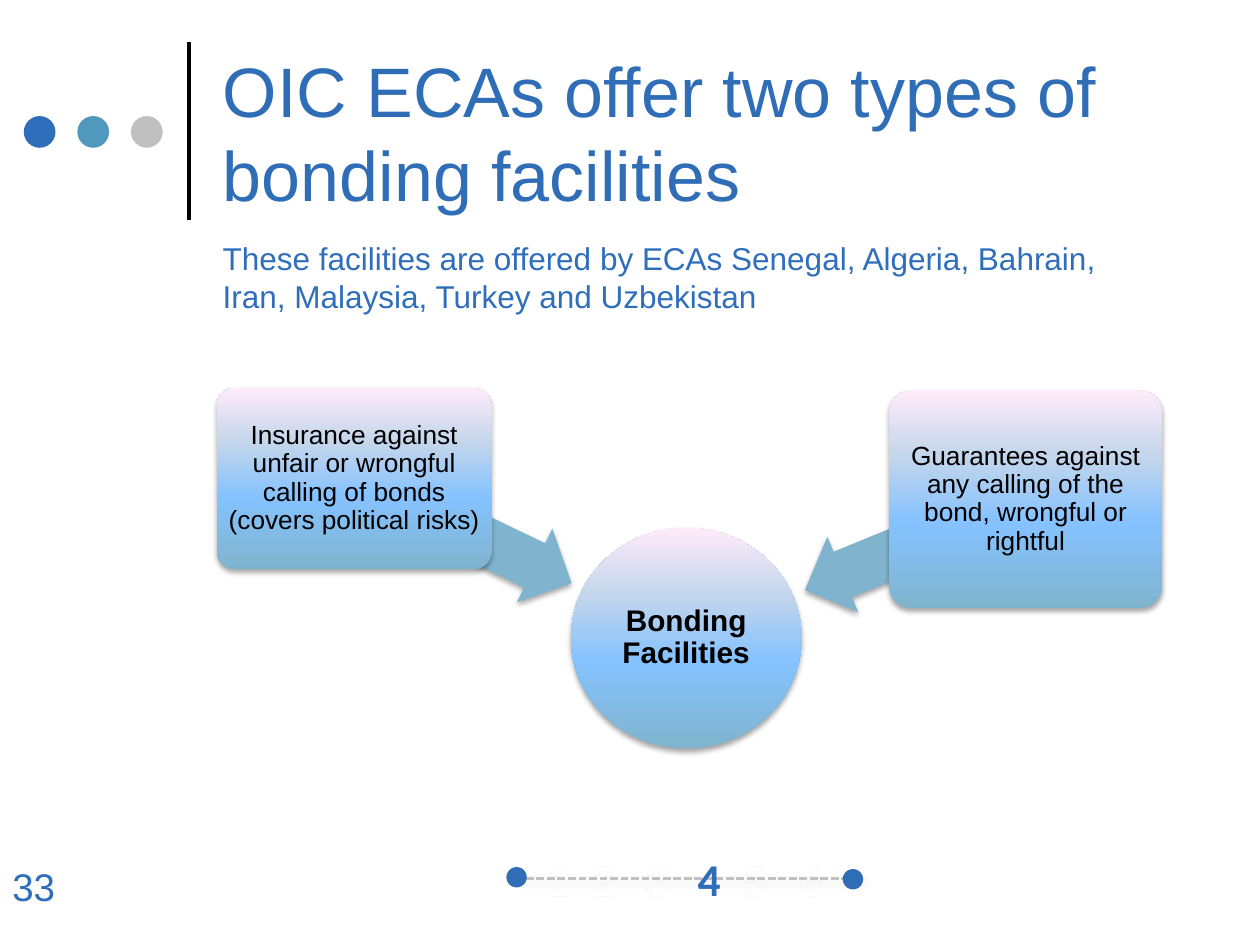
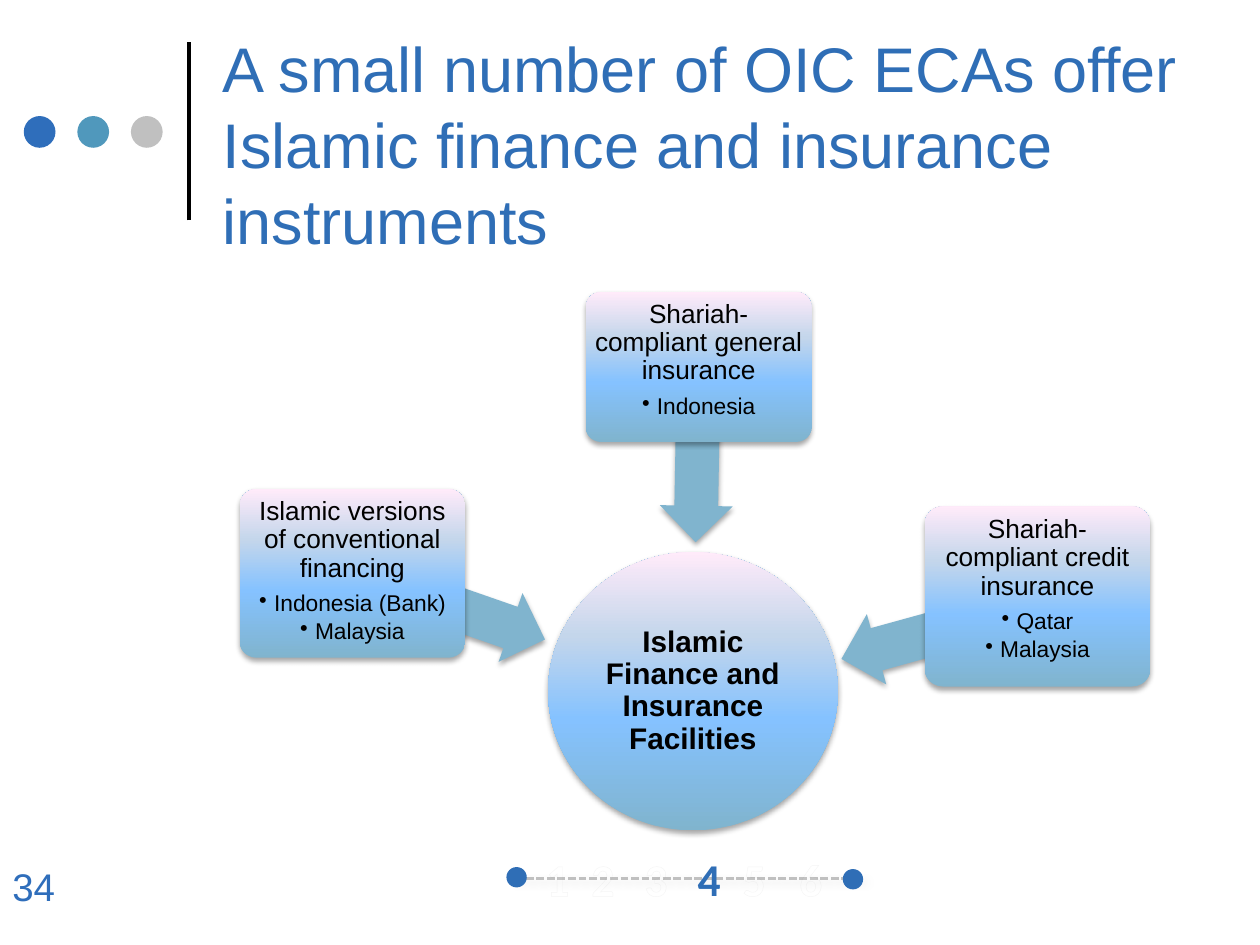
from dataclasses import dataclass

from lxml import etree
from pptx import Presentation
from pptx.dml.color import RGBColor
from pptx.enum.dml import MSO_LINE
from pptx.enum.shapes import MSO_CONNECTOR, MSO_SHAPE
from pptx.enum.text import MSO_ANCHOR, PP_ALIGN
from pptx.oxml.ns import qn
from pptx.util import Cm, Pt

ELLIPSE = MSO_SHAPE.OVAL
CARD = MSO_SHAPE.ROUNDED_RECTANGLE
ARROW = MSO_SHAPE.LEFT_ARROW
STRAIGHT = MSO_CONNECTOR.STRAIGHT
DASHED = MSO_LINE.SQUARE_DOT
TOP, MIDDLE = MSO_ANCHOR.TOP, MSO_ANCHOR.MIDDLE
LEFT, CENTER = PP_ALIGN.LEFT, PP_ALIGN.CENTER
TITLE_ONLY = 5


@dataclass(frozen=True)
class Theme:
    """Colours, fonts and type sizes of the deck."""
    blue: str = "2F6EBB"
    title_blue: str = "2F6EB6"
    teal: str = "5098BC"
    grey: str = "C0C0C0"
    black: str = "000000"
    white: str = "FFFFFF"
    digit_outline: str = "5F5F5F"
    line_shadow: str = "BFBFBF"
    arrow: str = "80B4CE"
    gradient: tuple = ((0, "80B4CE"), (40, "85C2FF"), (70, "C4D6EB"), (100, "FFEBFA"))
    font: str = "Arial"
    digit_font: str = "Calibri"
    digit_size: int = 26
    number_size: int = 22
    subtitle_size: int = 18
    hub_size: int = 17
    card_size: int = 15
    item_size: int = 13


THEME = Theme()


@dataclass(frozen=True)
class Box:
    """A rectangle in centimetres."""
    left: float
    top: float
    width: float
    height: float

    def inside(self, left, top, width, height):
        """Return a box placed relative to this one."""
        return Box(self.left + left, self.top + top, width, height)

    def lengths(self):
        """Return the four lengths for python-pptx."""
        return [Cm(value) for value in (self.left, self.top, self.width, self.height)]


def add_color(parent, color, alpha=100):
    """Append an RGB colour with an opacity in percent."""
    element = etree.SubElement(parent, qn("a:srgbClr"), val=color)
    if alpha < 100:
        etree.SubElement(element, qn("a:alpha"), val=str(alpha * 1000))


def set_shadow(shape, color=None, alpha=35, blur=3.1, distance=1.8, angle=90):
    """Give a shape an outer shadow, or none without a colour."""
    effects = etree.SubElement(shape._element.spPr, qn("a:effectLst"))
    if color:
        shadow = etree.SubElement(
            effects, qn("a:outerShdw"), blurRad=str(Pt(blur)), dist=str(Pt(distance)),
            dir=str(angle * 60000), rotWithShape="0")
        add_color(shadow, color, alpha)


def set_gradient(shape, stops):
    """Fill a shape from bottom to top with the given colour stops."""
    shape.fill.gradient()
    shape.fill.gradient_angle = 90
    stop_list = shape._element.spPr.find(qn("a:gradFill")).find(qn("a:gsLst"))
    for stop in list(stop_list):
        stop_list.remove(stop)
    for position, color in stops:
        add_color(etree.SubElement(stop_list, qn("a:gs"), pos=str(position * 1000)), color)


def add_figure(page, kind, box, fill=None, shadow=None):
    """Add a borderless shape, with the theme gradient unless a fill is given."""
    shape = page.shapes.add_shape(kind, *box.lengths())
    if fill:
        shape.fill.solid()
        shape.fill.fore_color.rgb = RGBColor.from_string(fill)
    else:
        set_gradient(shape, THEME.gradient)
    shape.line.fill.background()
    set_shadow(shape, shadow)
    return shape


def add_line(page, start, end, color, width):
    """Add a straight line between two points in centimetres."""
    line = page.shapes.add_connector(STRAIGHT, *(Cm(value) for value in start + end))
    line.line.color.rgb = RGBColor.from_string(color)
    line.line.width = Pt(width)
    return line


def add_bullet(para):
    """Make a paragraph a second-level bulleted item."""
    para.level = 1
    properties = para._p.get_or_add_pPr()
    properties.set("marL", str(Cm(0.3)))
    properties.set("indent", str(Cm(-0.3)))
    etree.SubElement(properties, qn("a:buChar"), char="•")


def write(frame, text, size, color=THEME.black, font=THEME.font, bold=False, align=LEFT,
          spacing=None, after=None, bullet=False, more=False):
    """Write one formatted paragraph and return its run."""
    para = frame.add_paragraph() if more else frame.paragraphs[0]
    para.alignment = align
    if spacing:
        para.line_spacing = spacing
    if after is not None:
        para.space_after = Pt(after)
    if bullet:
        add_bullet(para)
    span = para.add_run()
    span.text = text
    span.font.name = font
    span.font.size = Pt(size)
    span.font.bold = bold
    span.font.color.rgb = RGBColor.from_string(color)
    return span


def prepare_frame(shape, inset, anchor):
    """Wrap the text of a shape and set equal margins."""
    frame = shape.text_frame
    frame.word_wrap = True
    frame.vertical_anchor = anchor
    frame.margin_left = frame.margin_right = Cm(inset)
    frame.margin_top = frame.margin_bottom = Cm(inset)
    return frame


def add_text(page, box, text, size, **style):
    """Add a text box of one paragraph and return its run."""
    frame = page.shapes.add_textbox(*box.lengths()).text_frame
    frame.word_wrap = True
    return write(frame, text, size, **style)


def draw_title(page, box, text, size):
    """Place and fill the title placeholder."""
    title = page.shapes.title
    title.left, title.top, title.width, title.height = box.lengths()
    frame = title.text_frame
    frame.word_wrap = True
    frame.vertical_anchor = MIDDLE
    write(frame, text, size, color=THEME.title_blue)


def draw_ornament(page, box):
    """Draw the three dots and the rule left of the title."""
    right = box.left + box.width
    rule = add_line(page, (right, box.top + box.height), (right, box.top), THEME.black, 2)
    set_shadow(rule)
    for index, color in enumerate((THEME.blue, THEME.teal, THEME.grey)):
        add_figure(page, ELLIPSE, box.inside(index * 1.08, 1.5, 0.64, 0.64), color)


def draw_progress(page, box, current):
    """Draw the chapter track with the current chapter highlighted."""
    middle = box.top + 0.68
    track = add_line(page, (box.left + 0.18, middle), (box.left + box.width, middle),
                     THEME.grey, 1.5)
    track.line.dash_style = DASHED
    set_shadow(track, THEME.line_shadow, alpha=40, blur=4, distance=3, angle=45)
    for left, top in ((0, 0.45), (box.width - 0.41, 0.49)):
        add_figure(page, ELLIPSE, box.inside(left, top, 0.41, 0.41), THEME.title_blue)
    for chapter, left in enumerate((0.41, 1.32, 2.39, 3.46, 4.37, 5.51), start=1):
        color = THEME.title_blue if chapter == current else THEME.white
        span = add_text(page, box.inside(left, 0, 1.25, box.height), str(chapter),
                        THEME.digit_size, color=color, font=THEME.digit_font,
                        bold=True, align=CENTER)
        properties = span.font._element if hasattr(span.font, "_element") else span._r.rPr
        properties.set("spc", "50")
        outline = etree.Element(qn("a:ln"), w=str(Pt(1.06)))
        add_color(etree.SubElement(outline, qn("a:solidFill")), THEME.digit_outline, 6)
        properties.insert(0, outline)


def draw_hub(page, box, text):
    """Draw the central circle of a diagram."""
    circle = add_figure(page, ELLIPSE, box, shadow=THEME.black)
    write(prepare_frame(circle, 0.03, MIDDLE), text, THEME.hub_size, bold=True,
          align=CENTER, spacing=0.9, after=6)


def draw_arrow(page, box, angle):
    """Draw an arrow turned towards the hub."""
    arrow = add_figure(page, ARROW, box, THEME.arrow, THEME.black)
    arrow.adjustments[0], arrow.adjustments[1] = 0.6, 0.5
    arrow.rotation = angle


def draw_card(page, box, heading, items):
    """Draw a rounded card with a heading and optional bullets."""
    card = add_figure(page, CARD, box, shadow=THEME.black)
    card.adjustments[0] = 0.1
    frame = prepare_frame(card, 0.08, TOP if items else MIDDLE)
    write(frame, heading, THEME.card_size, align=CENTER, spacing=0.9, after=5.25)
    for item in items:
        write(frame, item, THEME.item_size, align=CENTER, spacing=0.9, after=1.95,
              bullet=True, more=True)


def draw_diagram(page, box, hub, branches):
    """Draw a hub and its cards, each joined to it by an arrow."""
    hub_place, hub_text = hub
    draw_hub(page, box.inside(*hub_place), hub_text)
    for arrow_place, angle, card_place, heading, items in branches:
        draw_arrow(page, box.inside(*arrow_place), angle)
        draw_card(page, box.inside(*card_place), heading, items)


def start_page(deck, title, title_box, title_size, number):
    """Add a slide with the title, ornament, page number and track."""
    page = deck.slides.add_slide(deck.slide_layouts[TITLE_ONLY])
    draw_ornament(page, Box(0.48, 0.84, 3.33, 3.6))
    draw_title(page, title_box, title, title_size)
    add_text(page, Box(0, 17.27, 1.75, 1.27), str(number), THEME.number_size,
             color=THEME.blue)
    draw_progress(page, Box(10.21, 17.03, 7.19, 1.37), current=4)
    return page


def build_bonding_page(deck):
    """Build the slide on bonding facilities."""
    page = start_page(deck, "OIC ECAs offer two types of bonding facilities",
                      Box(4.24, 0.53, 20.32, 4.24), 40, 33)
    add_text(page, Box(4.24, 4.7, 19.48, 1.8),
             "These facilities are offered by ECAs Senegal, Algeria, Bahrain, Iran, "
             "Malaysia, Turkey and Uzbekistan", THEME.subtitle_size, color=THEME.blue)
    draw_diagram(page, Box(4.37, 7.82, 19.05, 7.27),
                 ((7.14, 2.82, 4.65, 4.45), "Bonding Facilities"), (
        ((2.54, 2.06, 4.85, 1.65), 205.6, (0, 0, 5.54, 3.66),
         "Insurance against unfair or wrongful calling of bonds (covers political risks)", ()),
        ((11.68, 2.34, 4.8, 1.65), 337.8, (13.56, 0.05, 5.49, 4.39),
         "Guarantees against any calling of the bond, wrongful or rightful", ()),
    ))


def build_islamic_page(deck):
    """Build the slide on Islamic finance and insurance."""
    page = start_page(
        deck, "A small number of OIC ECAs offer Islamic finance and insurance instruments",
        Box(4.24, 0.53, 20.37, 4.72), 36, 34)
    draw_diagram(page, Box(4.83, 5.89, 18.36, 10.85),
                 ((6.22, 5.24, 5.84, 5.61), "Islamic Finance and Insurance Facilities"), (
        ((2.16, 5.59, 4.11, 1.47), 199.2, (0, 3.97, 4.55, 3.4),
         "Islamic versions of conventional financing", ("Indonesia (Bank)", "Malaysia")),
        ((12.06, 6.12, 4.06, 1.47), 344.6, (13.81, 4.32, 4.55, 3.63),
         "Shariah-compliant credit insurance", ("Qatar", "Malaysia")),
        ((7.46, 2.54, 3.53, 1.47), 271, (6.98, 0, 4.55, 3.02),
         "Shariah-compliant general insurance", ("Indonesia",)),
    ))


def main():
    """Build and save the deck."""
    deck = Presentation()
    deck.slide_width, deck.slide_height = Cm(25.4), Cm(19.05)
    build_bonding_page(deck)
    build_islamic_page(deck)
    deck.save("out.pptx")


if __name__ == "__main__":
    main()
